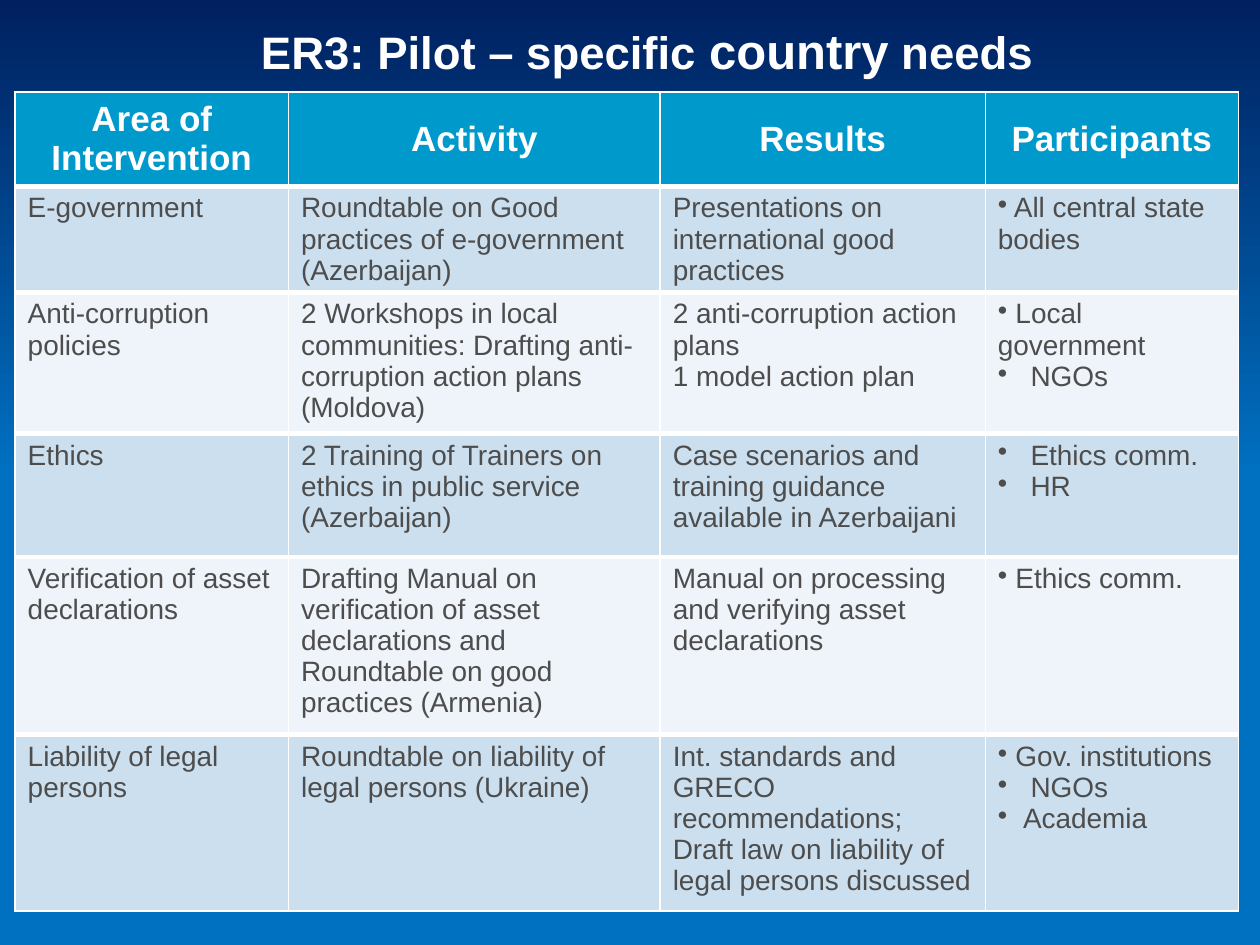
from copy import deepcopy
from lxml.etree import SubElement
from pptx import Presentation
from pptx.dml.color import RGBColor
from pptx.enum.text import MSO_ANCHOR, MSO_AUTO_SIZE, PP_ALIGN
from pptx.oxml.ns import qn
from pptx.util import Inches, Pt

HUES = {"top": "002060", "base": "0070C0", "head": "0099CC", "odd": "CCDFEE",
        "even": "EEF4F9", "text": "4D4D4D", "white": "FFFFFF"}
FONT = "Arial"
TITLE = [("ER3: Pilot – specific ", 26), ("country", 28), (" needs", 26)]
HEADS = ["Area of Intervention", "Activity", "Results", "Participants"]
ROWS = [
    (["E-government"],
     ["Roundtable on Good", "practices of e-government (Azerbaijan)"],
     ["Presentations on international good practices"],
     [" All central state bodies"]),
    (["Anti-corruption policies"],
     ["2 Workshops in local communities: Drafting anti-corruption action plans (Moldova)"],
     ["2 anti-corruption action plans", "1 model action plan"],
     [" Local government", "NGOs"]),
    (["Ethics"],
     ["2 Training of Trainers on ethics in public service (Azerbaijan)"],
     ["Case scenarios and training guidance available in Azerbaijani"],
     ["Ethics comm.", "HR"]),
    (["Verification of asset declarations"],
     ["Drafting Manual on verification of asset declarations and Roundtable on good practices (Armenia)"],
     ["Manual on processing and verifying asset declarations"],
     [" Ethics comm."]),
    (["Liability of legal persons"],
     ["Roundtable on liability of legal persons (Ukraine)"],
     ["Int. standards and GRECO recommendations;",
      "Draft law on liability of legal persons discussed"],
     [" Gov. institutions", "NGOs", "Academia"]),
]
GAPS = {"NGOs": 0.26, "Ethics comm.": 0.26, "HR": 0.26, "Academia": 0.2}
WIDTHS = [2.17, 2.95, 2.58, 2.01]
HEIGHTS = [0.75, 0.84, 1.12, 0.98, 1.41, 1.4]


def color(name):
    return RGBColor.from_string(HUES[name])


def style(run, size, hue, bold):
    font = run.font
    font.name, font.size, font.bold = FONT, Pt(size), bold
    font.color.rgb = color(hue)


def border(cell, row, last):
    props = cell._tc.get_or_add_tcPr()
    sides = {"lnL": 1, "lnR": 1, "lnT": 3 if row else 1, "lnB": 1 if row == last else 3}
    for side, width in sides.items():
        line = SubElement(props, qn("a:" + side), w=str(Pt(width)))
        fill = SubElement(line, qn("a:solidFill"))
        SubElement(fill, qn("a:srgbClr"), val=HUES["white"])


def bullet(para):
    props = para._p.get_or_add_pPr()
    gap = Inches(GAPS.get(para.text, 0))
    props.set("marL", str(gap))
    props.set("indent", str(-gap))
    SubElement(props, qn("a:buChar"), char="•")


def paint(slide):
    fill = slide.background.fill
    fill.gradient()
    fill.gradient_angle = 270
    first, end = fill.gradient_stops
    first.color.rgb, first.position = color("top"), 0
    end.color.rgb, end.position = color("base"), 0.5
    tail = deepcopy(end._gs)
    tail.set("pos", "100000")
    end._gs.addnext(tail)


def add_title(slide):
    title = slide.shapes.title
    title.left, title.top = Inches(0.48), Inches(0)
    title.width, title.height = Inches(9.31), Inches(0.8)
    frame = title.text_frame
    frame.auto_size = MSO_AUTO_SIZE.NONE
    frame.vertical_anchor = MSO_ANCHOR.MIDDLE
    para = frame.paragraphs[0]
    para.alignment = PP_ALIGN.CENTER
    for text, size in TITLE:
        run = para.add_run()
        run.text = text
        style(run, size, "white", True)


def add_grid(slide):
    data = [[[head] for head in HEADS], *ROWS]
    table = slide.shapes.add_table(
        len(data), len(HEADS), Inches(0.12), Inches(0.73),
        Inches(sum(WIDTHS)), Inches(sum(HEIGHTS))).table
    for col, width in zip(table.columns, WIDTHS):
        col.width = Inches(width)
    for row, height in zip(table.rows, HEIGHTS):
        row.height = Inches(height)
    for r, items in enumerate(data):
        look = ("head" if r == 0 else "odd" if r % 2 else "even")
        for c, lines in enumerate(items):
            cell = table.cell(r, c)
            border(cell, r, len(data) - 1)
            cell.fill.solid()
            cell.fill.fore_color.rgb = color(look)
            cell.vertical_anchor = MSO_ANCHOR.TOP if r else MSO_ANCHOR.MIDDLE
            cell.text_frame.text = "\n".join(lines)
            for para in cell.text_frame.paragraphs:
                para.alignment = PP_ALIGN.LEFT if r else PP_ALIGN.CENTER
                style(para.runs[0], 16 if r else 20, "text" if r else "white", r == 0)
                if r and c == len(HEADS) - 1:
                    bullet(para)


def main():
    deck = Presentation()
    deck.slide_width, deck.slide_height = Inches(10), Inches(7.5)
    slide = deck.slides.add_slide(deck.slide_layouts[5])
    paint(slide)
    add_title(slide)
    add_grid(slide)
    deck.save("out.pptx")


if __name__ == "__main__":
    main()
